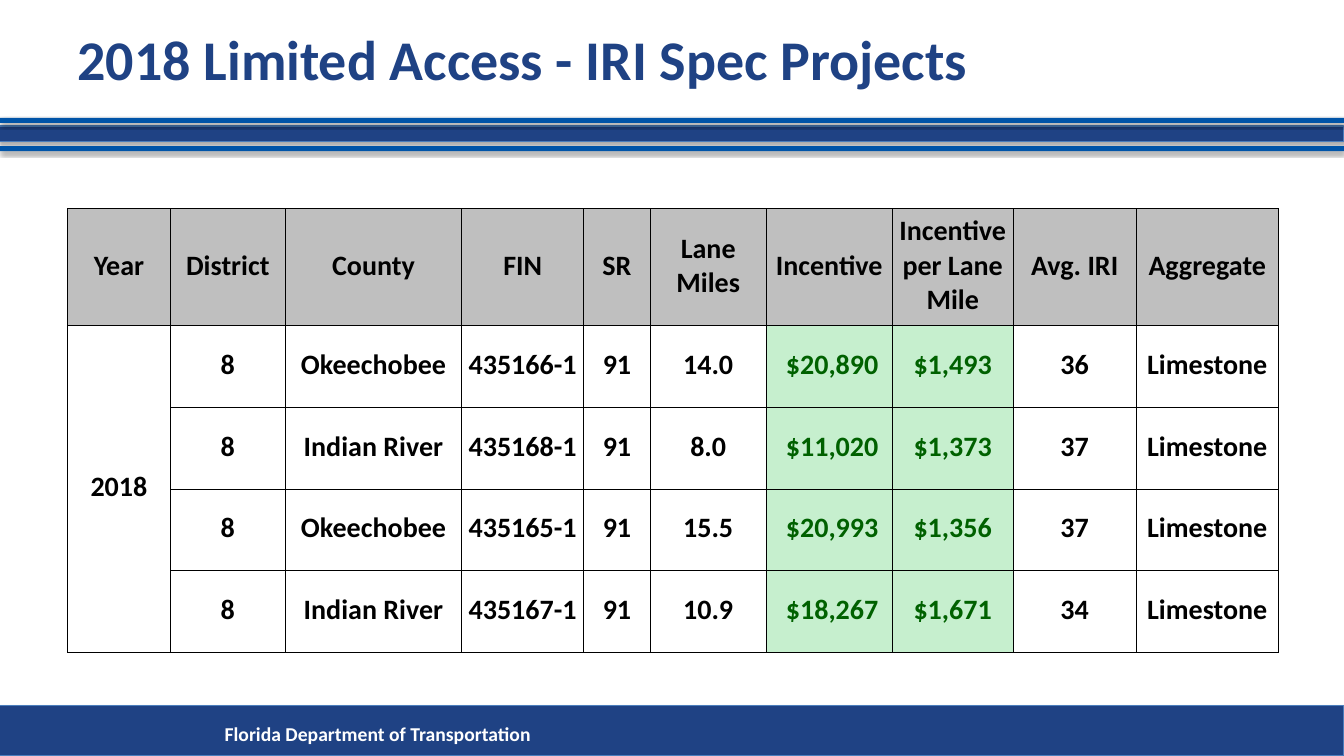
"""Build the 2018 limited access IRI projects slide."""
from dataclasses import dataclass
from typing import Optional

import pptx
import pptx.dml.color
import pptx.enum.shapes
import pptx.enum.text
import pptx.oxml
import pptx.oxml.ns
import pptx.util

PX = 9144
FONT = "Calibri"
COLORS = {
    "navy": "1F4284", "blue": "0054A8", "edge": "4B7EBC", "white": "FFFFFF",
    "black": "000000", "gray": "BFBFBF", "mint": "C6EFCE", "green": "006100",
}
MIDDLE = pptx.enum.text.MSO_ANCHOR.MIDDLE
LEFT = pptx.enum.text.PP_ALIGN.LEFT
CENTER = pptx.enum.text.PP_ALIGN.CENTER

COLUMN_WIDTHS = (102, 114, 175, 121, 66, 115, 125, 120, 122, 141)
ROW_HEIGHTS = (116, 81, 81, 81, 81)
INCENTIVE, INCENTIVE_PER_MILE = 6, 7
HEADERS = ("Year", "District", "County", "FIN", "SR", "Lane Miles", "Incentive",
           "Incentive per Lane Mile", "Avg. IRI", "Aggregate")


@dataclass(frozen=True)
class Band:
    top: int
    height: int
    fill: str
    edge: Optional[str] = None


@dataclass(frozen=True)
class Project:
    county: str
    fin: str
    miles: str
    incentive: str
    per_mile: str
    iri: str

    def cells(self, year: str) -> tuple[str, ...]:
        return (year, "8", self.county, self.fin, "91", self.miles,
                self.incentive, self.per_mile, self.iri, "Limestone")


BANDS = (
    Band(125, 15, "navy", "edge"),
    Band(145, 5, "blue"),
    Band(117, 5, "blue"),
    Band(700, 50, "navy", "edge"),
)
PROJECTS = (
    Project("Okeechobee", "435166-1", "14.0", "$20,890", "$1,493", "36"),
    Project("Indian River", "435168-1", "8.0", "$11,020", "$1,373", "37"),
    Project("Okeechobee", "435165-1", "15.5", "$20,993", "$1,356", "37"),
    Project("Indian River", "435167-1", "10.9", "$18,267", "$1,671", "34"),
)


def px(*lengths: int) -> list[int]:
    return [length * PX for length in lengths]


def rgb(name: str) -> pptx.dml.color.RGBColor:
    return pptx.dml.color.RGBColor.from_string(COLORS[name])


def write(tf, text: str, size: int, color: str, align=LEFT) -> None:
    tf.text = text
    p = tf.paragraphs[0]
    p.alignment = align
    p.font.name = FONT
    p.font.size = pptx.util.Pt(size)
    p.font.bold = True
    p.font.color.rgb = rgb(color)


def add_band(s, band: Band) -> None:
    sp = s.shapes.add_shape(pptx.enum.shapes.MSO_SHAPE.RECTANGLE,
                            *px(0, band.top, 1333, band.height))
    sp.fill.solid()
    sp.fill.fore_color.rgb = rgb(band.fill)
    if band.edge:
        sp.line.color.rgb = rgb(band.edge)
        sp.line.width = pptx.util.Pt(0.75)
    else:
        sp.line.fill.background()
    sp.shadow.inherit = False
    effects = sp.element.spPr.find(pptx.oxml.ns.qn("a:effectLst"))
    effects.append(pptx.oxml.parse_xml(
        f'<a:outerShdw {pptx.oxml.ns.nsdecls("a")} blurRad="39370" dist="22860" '
        f'dir="5400000" rotWithShape="0"><a:srgbClr val="{COLORS["black"]}">'
        '<a:alpha val="35000"/></a:srgbClr></a:outerShdw>'))


def add_footer(s) -> None:
    tf = s.shapes.add_textbox(*px(213, 711, 1064, 34)).text_frame
    tf.word_wrap = True
    tf.auto_size = pptx.enum.text.MSO_AUTO_SIZE.SHAPE_TO_FIT_TEXT
    write(tf, "Florida Department of Transportation", 14, "white")


def set_title(s) -> None:
    title = s.shapes.title
    title.left, title.top, title.width, title.height = px(67, 1, 1200, 114)
    tf = title.text_frame
    tf.auto_size = pptx.enum.text.MSO_AUTO_SIZE.NONE
    tf.vertical_anchor = MIDDLE
    write(tf, "2018 Limited Access - IRI Spec Projects", 40, "navy")


def set_borders(cell, row: int) -> None:
    widths = {"L": 0.5, "R": 0.5, "T": 1 if row == 1 else 0.5,
              "B": 1 if row == 0 else 0.5}
    tc_pr = cell._tc.get_or_add_tcPr()
    for index, (side, width) in enumerate(widths.items()):
        tc_pr.insert(index, pptx.oxml.parse_xml(
            f'<a:ln{side} {pptx.oxml.ns.nsdecls("a")} w="{pptx.util.Pt(width)}">'
            f'<a:solidFill><a:srgbClr val="{COLORS["black"]}"/></a:solidFill>'
            f'</a:ln{side}>'))


def format_cell(cell, row: int, column: int, text: str) -> None:
    money = row > 0 and column in (INCENTIVE, INCENTIVE_PER_MILE)
    fill = "gray" if row == 0 else "mint" if money else None
    if fill:
        cell.fill.solid()
        cell.fill.fore_color.rgb = rgb(fill)
    else:
        cell.fill.background()
    left = 7 if money and column == INCENTIVE else 1
    (cell.margin_left, cell.margin_top,
     cell.margin_right, cell.margin_bottom) = px(left, 1, 1, 4)
    cell.vertical_anchor = MIDDLE
    set_borders(cell, row)
    if text:
        write(cell.text_frame, text, 20, "green" if money else "black", CENTER)


def add_projects_table(s) -> None:
    rows = [HEADERS] + [project.cells("" if i else "2018")
                        for i, project in enumerate(PROJECTS)]
    table = s.shapes.add_table(len(rows), len(HEADERS),
                               *px(67, 207, 1200, 439)).table
    table.first_row = table.horz_banding = False
    for column, width in zip(table.columns, COLUMN_WIDTHS):
        column.width = width * PX
    for row, height in zip(table.rows, ROW_HEIGHTS):
        row.height = height * PX
    for r, texts in enumerate(rows):
        for c, text in enumerate(texts):
            format_cell(table.cell(r, c), r, c, text)
    table.cell(1, 0).merge(table.cell(len(PROJECTS), 0))


def main() -> None:
    prs = pptx.Presentation()
    prs.slide_width, prs.slide_height = px(1333, 750)
    s = prs.slides.add_slide(prs.slide_layouts.get_by_name("Title Only"))
    for band in BANDS:
        add_band(s, band)
    add_footer(s)
    set_title(s)
    add_projects_table(s)
    prs.save("out.pptx")


if __name__ == "__main__":
    main()
